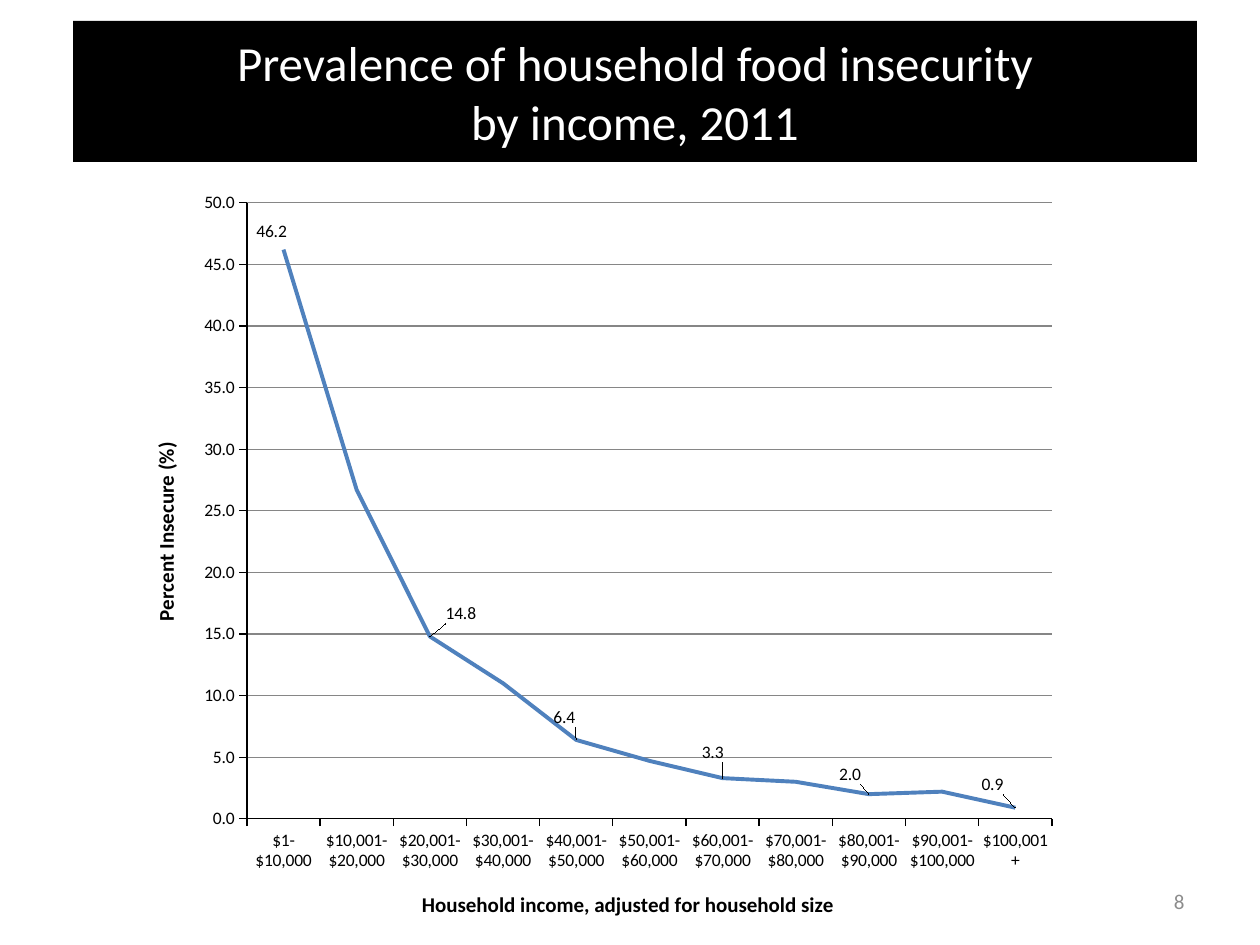
from lxml import etree
from pptx import Presentation
from pptx.chart.data import CategoryChartData
from pptx.dml.color import RGBColor
from pptx.enum.chart import XL_CHART_TYPE, XL_LABEL_POSITION, XL_MARKER_STYLE, XL_TICK_MARK
from pptx.enum.text import MSO_ANCHOR, MSO_AUTO_SIZE, PP_ALIGN
from pptx.oxml.ns import qn
from pptx.util import Pt

LINE = XL_CHART_TYPE.LINE
ABOVE = XL_LABEL_POSITION.ABOVE
NO_MARKER = XL_MARKER_STYLE.NONE
TICK_OUT, TICK_NONE = XL_TICK_MARK.OUTSIDE, XL_TICK_MARK.NONE
MIDDLE = MSO_ANCHOR.MIDDLE
CENTER, RIGHT = PP_ALIGN.CENTER, PP_ALIGN.RIGHT

BLACK = RGBColor(0x00, 0x00, 0x00)
WHITE = RGBColor(0xFF, 0xFF, 0xFF)
BLUE = RGBColor(0x4F, 0x81, 0xBD)
GRAY = RGBColor(0x8C, 0x8C, 0x8C)
GRID_GRAY = RGBColor(0x86, 0x86, 0x86)
FONT = "Calibri"
TITLE_ONLY = 5

INCOMES = ["$1-$10,000"] + [
    f"${low},001-${low + 10},000" for low in range(10, 100, 10)
] + ["$100,001+"]
INSECURE = [46.2, 26.7, 14.8, 11, 6.4, 4.7, 3.3, 3, 2, 2.2, 0.9]
# Labelled points and the shift of each label, in px
LABEL_SHIFTS = {0: (-12, -3), 2: (31, -8), 4: (-12, -8),
                6: (-10, -11), 8: (-19, -5), 10: (-23, -8)}


def px(length):
    return round(length * 914400 / 126)


def set_font(font, size, color, bold=False):
    font.name, font.size, font.bold = FONT, Pt(size), bold
    font.color.rgb = color


def manual_layout(**settings):
    layout = etree.Element(qn("c:layout"))
    manual = etree.SubElement(layout, qn("c:manualLayout"))
    for name, value in settings.items():
        etree.SubElement(manual, qn(f"c:{name}")).set("val", str(value))
    return layout


def write_lines(frame, lines, size, color, align):
    frame.word_wrap = True
    frame.auto_size = MSO_AUTO_SIZE.NONE
    frame.vertical_anchor = MIDDLE
    frame.text = "\n".join(lines)
    for para in frame.paragraphs:
        para.alignment = align
        set_font(para.font, size, color)


def place_title(page, left, top, width, height):
    title = page.shapes.title
    title.left, title.top = px(left), px(top)
    title.width, title.height = px(width), px(height)
    title.fill.solid()
    title.fill.fore_color.rgb = BLACK
    lines = ["Prevalence of household food insecurity", "by income, 2011"]
    write_lines(title.text_frame, lines, 28, WHITE, CENTER)


def style_axis(axis, title):
    axis.major_tick_mark, axis.minor_tick_mark = TICK_OUT, TICK_NONE
    axis.format.line.color.rgb = BLACK
    axis.format.line.width = Pt(0.75)
    frame = axis.axis_title.text_frame
    frame.text = title
    set_font(frame.paragraphs[0].font, 12, BLACK, bold=True)


def label_points(series, width, height):
    series.data_labels.show_value = False
    for index, (right, down) in LABEL_SHIFTS.items():
        series.points[index].data_label.position = ABOVE
    for label in series.data_labels._element.findall(qn("c:dLbl")):
        mark = label.find(qn("c:idx"))
        right, down = LABEL_SHIFTS[int(mark.get("val"))]
        mark.addnext(manual_layout(x=round(right / width, 4), y=round(down / height, 4)))


def place_chart(page, left, top, width, height):
    data = CategoryChartData(number_format="0.0")
    data.categories = INCOMES
    data.add_series("Series 1", INSECURE)
    chart = page.shapes.add_chart(
        LINE, px(left), px(top), px(width), px(height), data).chart
    chart.has_legend = chart.has_title = False
    set_font(chart.font, 10, BLACK)

    # Plot area inside the axes
    chart.plots[0]._element.getparent().insert(0, manual_layout(
        layoutTarget="inner", xMode="edge", yMode="edge",
        x=round(121 / width, 4), y=round(24 / height, 4),
        w=round(805 / width, 4), h=round(616 / height, 4)))
    for old in chart.plots[0]._element.getparent().findall(qn("c:layout"))[1:]:
        old.getparent().remove(old)

    # Axes
    style_axis(chart.category_axis, "Household income, adjusted for household size")
    percent = chart.value_axis
    style_axis(percent, "Percent Insecure (%)")
    percent.minimum_scale, percent.maximum_scale, percent.major_unit = 0, 50, 5
    percent.tick_labels.number_format = "0.0"
    percent.tick_labels.number_format_is_linked = False
    percent.major_gridlines.format.line.color.rgb = GRID_GRAY
    percent.major_gridlines.format.line.width = Pt(0.75)

    # Line and its labels
    series = chart.plots[0].series[0]
    series.smooth = False
    series.marker.style = NO_MARKER
    series.format.line.color.rgb = BLUE
    series.format.line.width = Pt(2.25)
    label_points(series, width, height)


def place_page_number(page, left, top, width, height):
    box = page.shapes.add_textbox(px(left), px(top), px(width), px(height))
    write_lines(box.text_frame, ["8"], 12, GRAY, RIGHT)


def main():
    deck = Presentation()
    deck.slide_width, deck.slide_height = px(1260), px(945)
    page = deck.slides.add_slide(deck.slide_layouts[TITLE_ONLY])
    place_chart(page, 126, 179, 945, 766)
    place_title(page, 73, 21, 1124, 141)
    place_page_number(page, 903, 876, 294, 50)
    deck.save("out.pptx")


if __name__ == "__main__":
    main()
